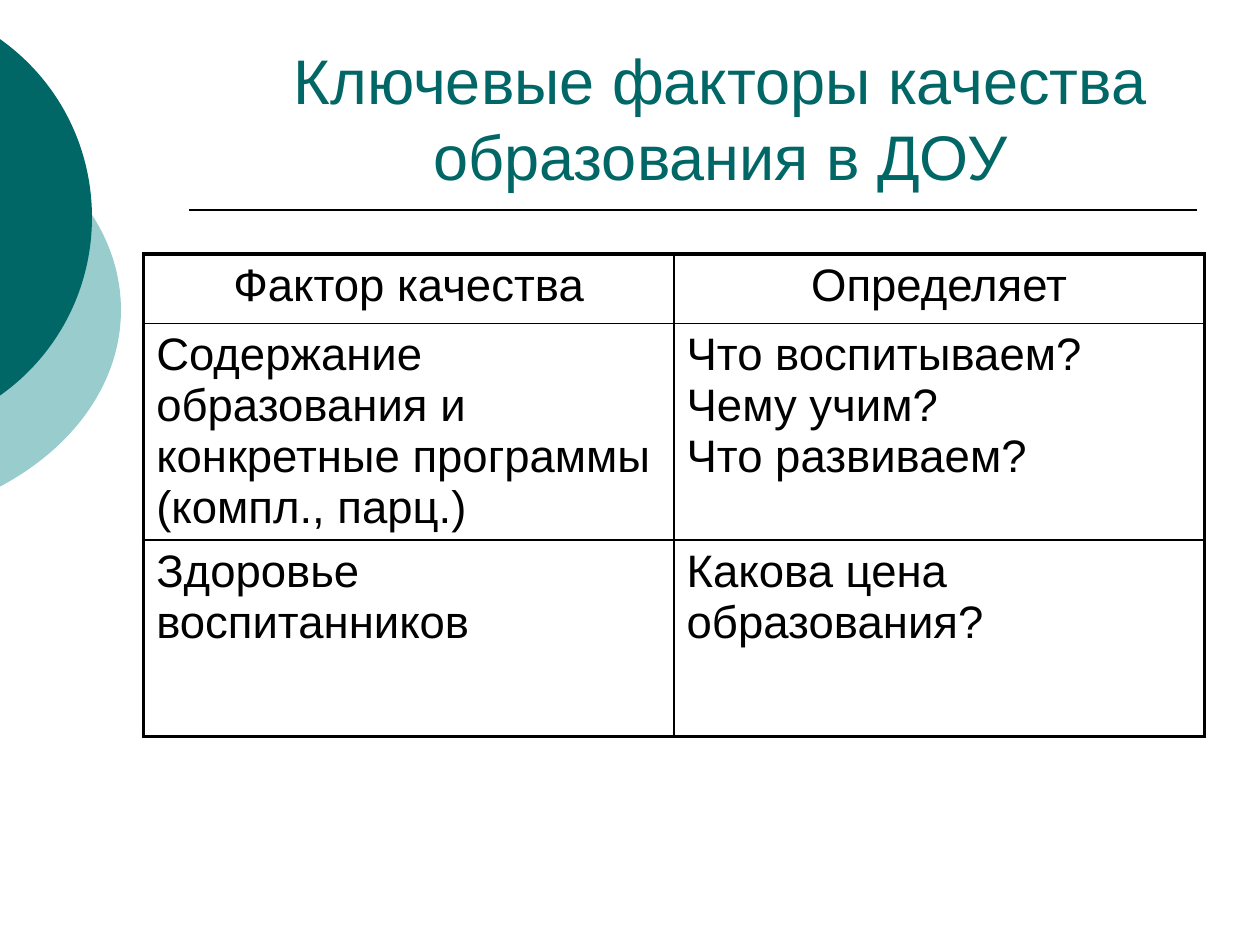
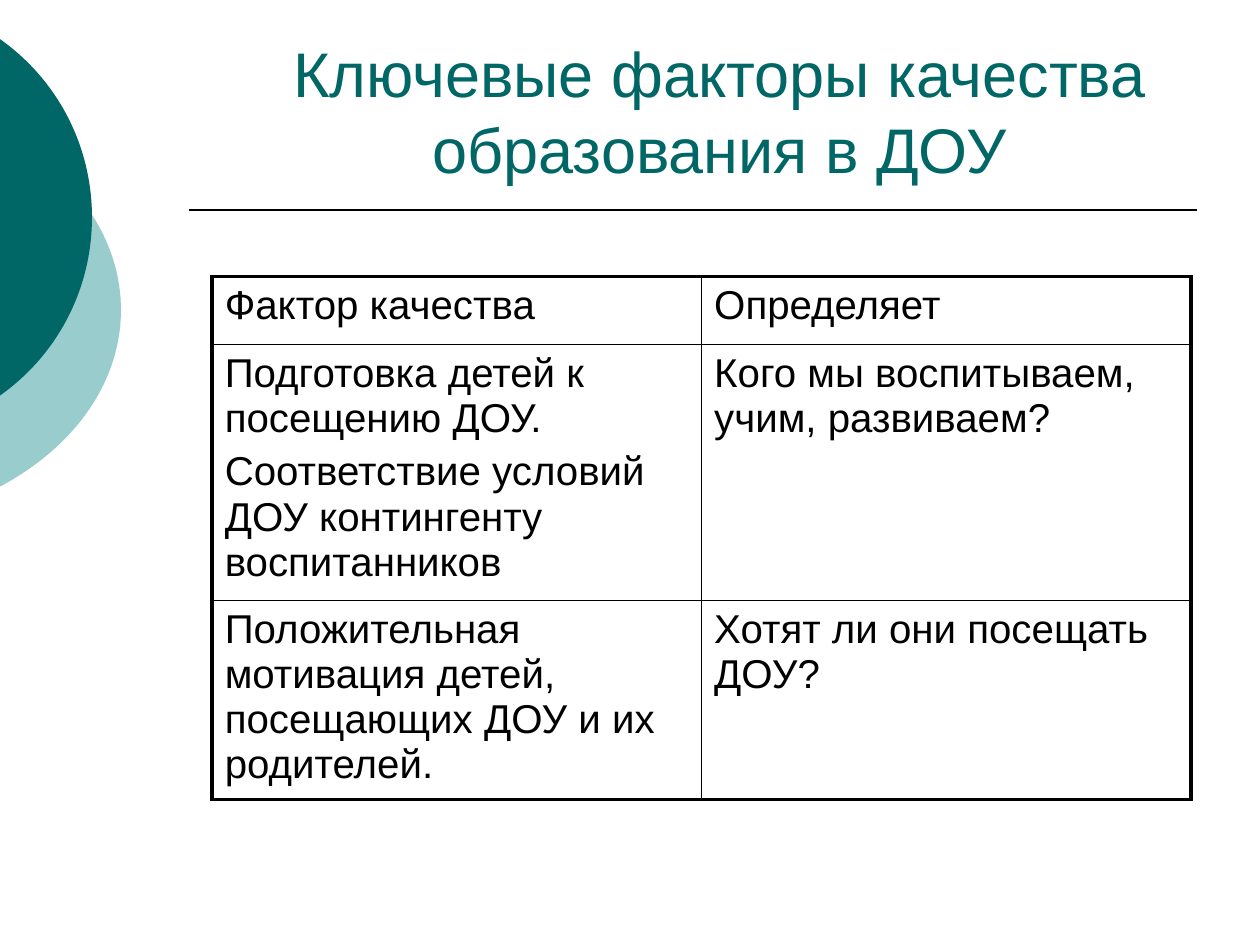
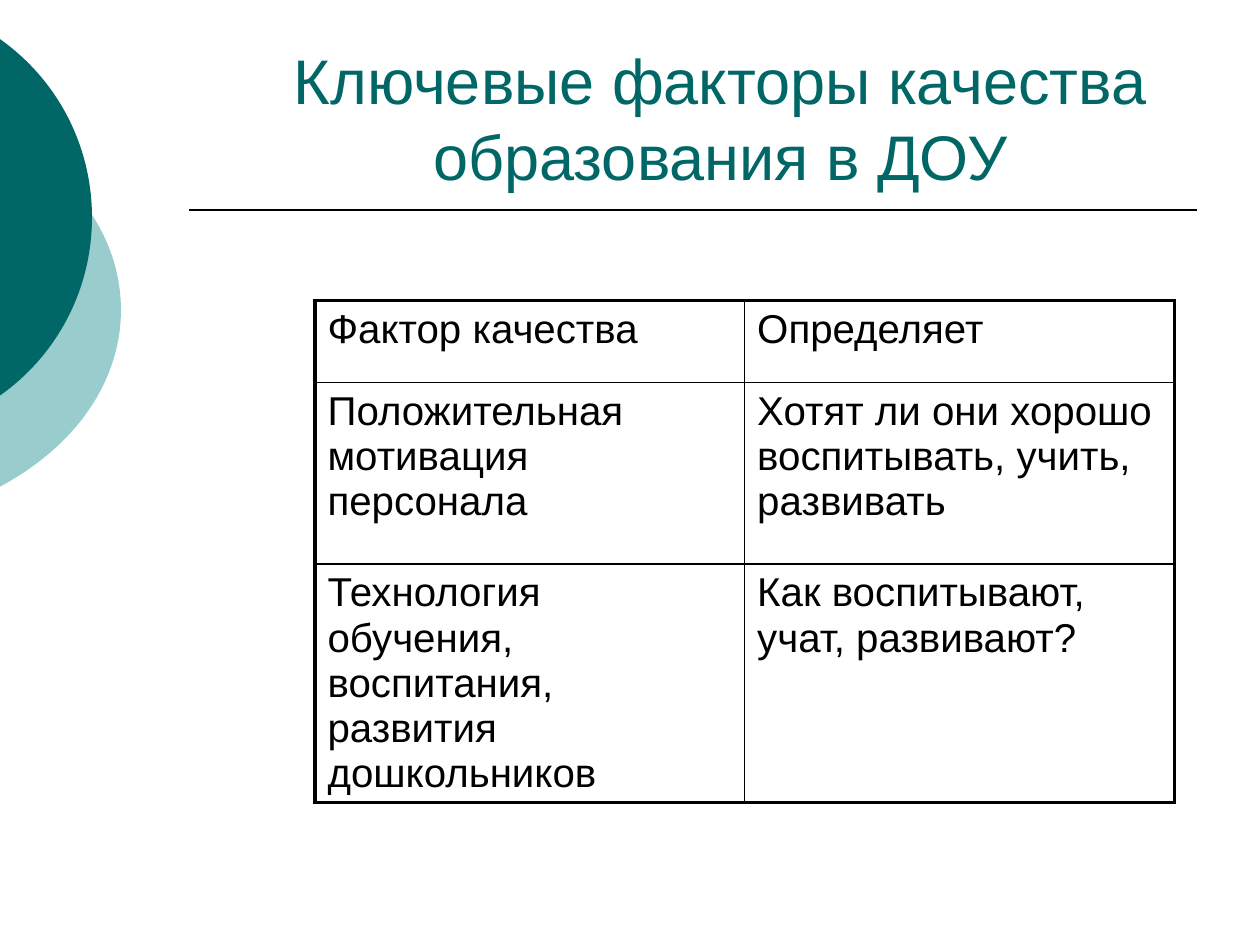
import collections

import lxml.etree
import pptx
import pptx.dml.color
import pptx.enum.shapes
import pptx.enum.text
import pptx.oxml.ns
import pptx.util

Box = collections.namedtuple("Box", "left top width height")

COLUMN = ROW = pptx.util.Inches(0.1)
SLIDE_COLUMNS, SLIDE_ROWS = 100, 75
FONT = "Arial"
TEAL, PALE_TEAL, BLACK = "006666", "99CCCC", "000000"
TITLE = "Ключевые факторы качества образования в ДОУ"
HEADINGS = ["Фактор качества", "Определяет"]
TITLE_BOX = Box(19.44, 3.3, 75.5, 12.5)
PALE_DISC_BOX = Box(-35.4, 7.5, 45, 34.2)
DARK_DISC_BOX = Box(-26.5, 0, 33.8, 34.5)
DISC_INSET = 0.09
RULE_BOX = Box(15, 16.67, 80, 0)
OUTER_LINE, INNER_LINE = 2.25, 1

FACTOR_SLIDES = [
    {
        "title_box": TITLE_BOX,
        "table_box": Box(11.4, 20.16, 84.2, 38.3),
        "row_heights": [5.5, 17.2, 15.6],
        "size": 26,
        "heading_alignment": pptx.enum.text.PP_ALIGN.CENTER,
        "rows": [
            ["Содержание образования и конкретные программы (компл., парц.)",
             "Что воспитываем?\nЧему учим?\nЧто развиваем?"],
            ["Здоровье воспитанников", "Какова цена образования?"],
        ],
    },
    {
        "title_box": Box(19.67, 3.44, 74.9, 11.8),
        "table_box": Box(16.84, 21.96, 77.7, 41.5),
        "row_heights": [5.4, 20.3, 15.8],
        "size": 23,
        "space_share": 0.2,
        "rows": [
            ["Подготовка детей к посещению ДОУ.\n"
             "Соответствие условий ДОУ контингенту воспитанников",
             "Кого мы воспитываем, учим, развиваем?"],
            ["Положительная мотивация детей, посещающих ДОУ и их родителей.",
             "Хотят ли они посещать ДОУ?"],
        ],
    },
    {
        "title_box": TITLE_BOX,
        "table_box": Box(25, 23.87, 68.2, 39.8),
        "row_heights": [6.5, 14.4, 18.9],
        "size": 23,
        "rows": [
            ["Положительная мотивация персонала",
             "Хотят ли они хорошо воспитывать, учить, развивать"],
            ["Технология обучения, воспитания, развития дошкольников",
             "Как воспитывают, учат, развивают?"],
        ],
    },
]


def color(value):
    return pptx.dml.color.RGBColor.from_string(value)


def columns(count):
    return round(count * COLUMN)


def rows(count):
    return round(count * ROW)


def place(box):
    return columns(box.left), rows(box.top), columns(box.width), rows(box.height)


def format_paragraph(paragraph, size, value, alignment=None):
    paragraph.font.name = FONT
    paragraph.font.size = pptx.util.Pt(size)
    paragraph.font.color.rgb = color(value)
    paragraph.alignment = alignment


def add_path_step(outline, kind, points):
    step = lxml.etree.SubElement(outline, pptx.oxml.ns.qn(f"a:{kind}"))
    for x, y in points:
        lxml.etree.SubElement(step, pptx.oxml.ns.qn("a:pt"), x=str(round(x)), y=str(round(y)))


def add_disc_edge(slide, box, value):
    left, top, width, height = place(box)
    builder = slide.shapes.build_freeform(left, top)
    builder.add_line_segments(
        [(left + width, top), (left + width, top + height), (left, top + height)], close=True)
    disc = builder.convert_to_shape()
    disc.shadow.inherit = False
    disc.fill.solid()
    disc.fill.fore_color.rgb = color(value)
    disc.line.fill.background()

    chord, inset = -left, height * DISC_INSET
    bulge, half = width - chord, height / 2 - inset
    upper = [(chord + bulge * across, inset + half * down)
             for across, down in [(0, 0), (0.63, 0.23), (1, 0.6), (1, 1)]]
    lower = [(x, height - y) for x, y in reversed(upper[:-1])]
    outline = disc._element.find(".//" + pptx.oxml.ns.qn("a:path"))
    for step in list(outline):
        outline.remove(step)
    add_path_step(outline, "moveTo", upper[:1])
    add_path_step(outline, "cubicBezTo", upper[1:])
    add_path_step(outline, "cubicBezTo", lower)
    add_path_step(outline, "close", [])


def add_rule(slide, box):
    left, top, width, height = place(box)
    rule = slide.shapes.add_connector(
        pptx.enum.shapes.MSO_CONNECTOR.STRAIGHT, left, top, left + width, top + height)
    rule.line.color.rgb = color(BLACK)
    rule.line.width = pptx.util.Pt(INNER_LINE)
    lxml.etree.SubElement(rule._element.spPr, pptx.oxml.ns.qn("a:effectLst"))


def add_backdrop(slide):
    add_disc_edge(slide, PALE_DISC_BOX, PALE_TEAL)
    add_disc_edge(slide, DARK_DISC_BOX, TEAL)
    add_rule(slide, RULE_BOX)


def set_title(slide, box):
    title = slide.shapes.title
    title.left, title.top, title.width, title.height = place(box)
    frame = title.text_frame
    frame.text = TITLE
    frame.word_wrap = True
    frame.auto_size = pptx.enum.text.MSO_AUTO_SIZE.NONE
    frame.vertical_anchor = pptx.enum.text.MSO_ANCHOR.BOTTOM
    format_paragraph(frame.paragraphs[0], 36, TEAL, pptx.enum.text.PP_ALIGN.CENTER)


def set_borders(cell, outer_sides):
    properties = cell._tc.get_or_add_tcPr()
    for position, side in enumerate(["L", "R", "T", "B"]):
        weight = OUTER_LINE if side in outer_sides else INNER_LINE
        border = pptx.oxml.parse_xml(
            f'<a:ln{side} {pptx.oxml.ns.nsdecls("a")} w="{pptx.util.Pt(weight)}">'
            f'<a:solidFill><a:srgbClr val="{BLACK}"/></a:solidFill></a:ln{side}>')
        properties.insert(position, border)


def fill_cell(cell, text, size, alignment, space_share):
    cell.fill.background()
    cell.text_frame.text = text
    for index, paragraph in enumerate(cell.text_frame.paragraphs):
        format_paragraph(paragraph, size, BLACK, alignment)
        if index:
            paragraph.space_before = pptx.util.Pt(size * space_share)


def add_factor_table(slide, box, row_heights, size, body, heading_alignment, space_share):
    content = [HEADINGS] + body
    last_row, last_column = len(content) - 1, len(HEADINGS) - 1
    table = slide.shapes.add_table(len(content), len(HEADINGS), *place(box)).table
    table.first_row = table.horz_banding = False
    for row_index, texts in enumerate(content):
        table.rows[row_index].height = rows(row_heights[row_index])
        for column_index, text in enumerate(texts):
            cell = table.cell(row_index, column_index)
            alignment = heading_alignment if row_index == 0 else None
            fill_cell(cell, text, size, alignment, space_share)
            edges = {"L": column_index == 0, "R": column_index == last_column,
                     "T": row_index == 0, "B": row_index == last_row}
            set_borders(cell, [side for side, outer in edges.items() if outer])


def add_factor_slide(presentation, content):
    slide = presentation.slides.add_slide(presentation.slide_layouts.get_by_name("Title Only"))
    add_backdrop(slide)
    set_title(slide, content["title_box"])
    add_factor_table(slide, content["table_box"], content["row_heights"], content["size"],
                     content["rows"], content.get("heading_alignment"),
                     content.get("space_share", 0))


def main():
    presentation = pptx.Presentation()
    presentation.slide_width = columns(SLIDE_COLUMNS)
    presentation.slide_height = rows(SLIDE_ROWS)
    for content in FACTOR_SLIDES:
        add_factor_slide(presentation, content)
    presentation.save("out.pptx")


if __name__ == "__main__":
    main()
